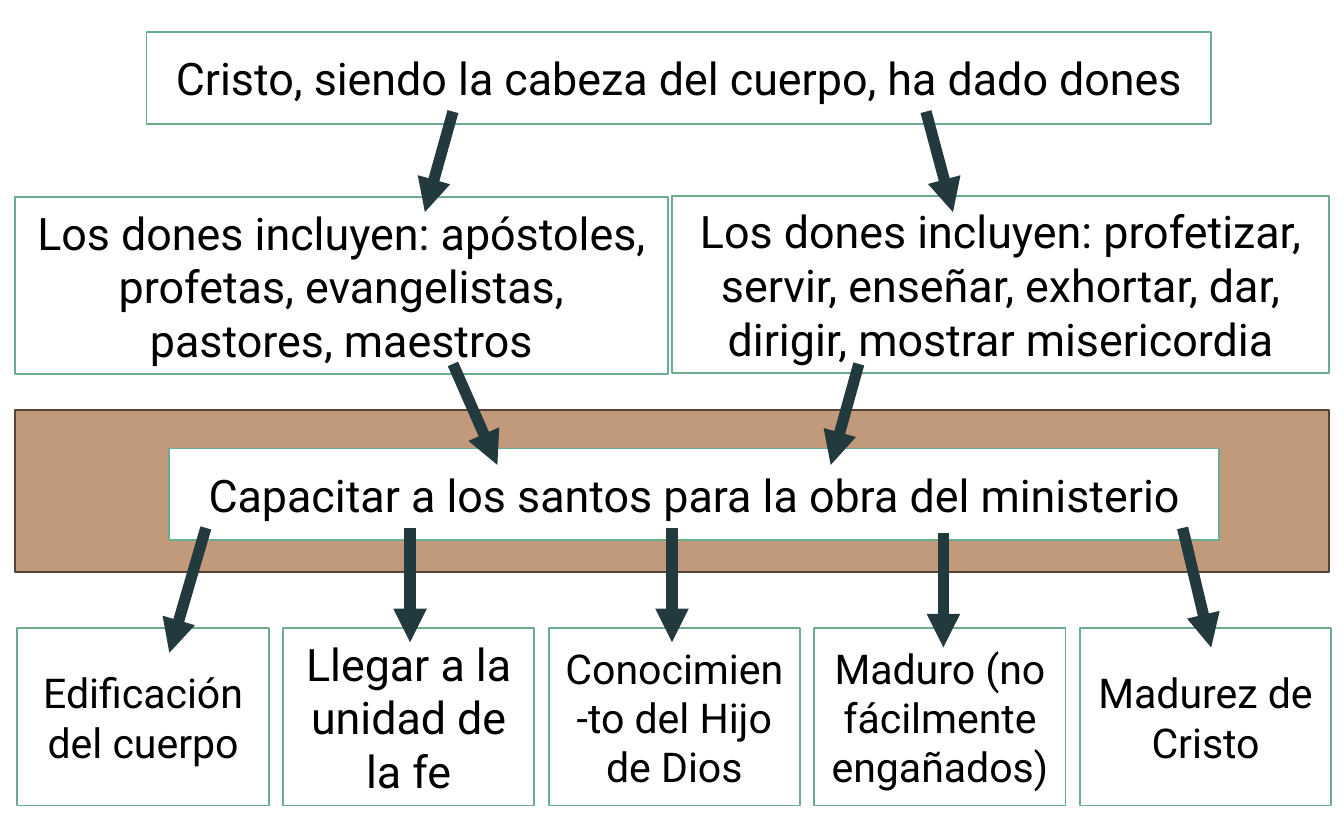
import pptx
import pptx.util
import pptx.dml.color
import pptx.enum.shapes
import pptx.enum.text
import pptx.oxml
import pptx.oxml.ns
from pptx.util import Cm

GREEN, WHITE, BLACK, DARK = "6DAD8F", "FFFFFF", "000000", "223A3D"
BAND, BAND_EDGE = "C19A7B", "554336"

GIFTS = [
    ("Los dones incluyen: apóstoles, profetas, evangelistas, pastores, maestros",
     (0.28, 3.73, 12.34, 3.35)),
    ("Los dones incluyen: profetizar, servir, enseñar, exhortar, dar, dirigir, "
     "mostrar misericordia", (12.7, 3.71, 12.42, 3.35)),
]
OUTCOMES = [
    ("Edificación del cuerpo", 22),
    ("Llegar a la unidad de la fe", 24),
    ("Conocimien-to del Hijo de Dios", 22),
    ("Maduro (no fácilmente engañados)", 22),
    ("Madurez de Cristo", 22),
]
OUTCOME_LEFT, OUTCOME_PITCH = 0.33, 5.02
ARROWS = [
    (8.56, 2.11, 8.03, 4.01), (17.5, 2.11, 18.01, 4.01),
    (8.56, 6.88, 9.4, 8.79), (16.23, 6.88, 15.7, 8.79),
    (3.89, 9.98, 3.2, 12.34), (7.75, 9.98, 7.75, 12.14),
    (12.7, 9.98, 12.7, 12.14), (17.83, 10.08, 17.83, 12.24),
    (22.35, 9.98, 22.89, 12.24),
]


def color(hex_string):
    """Turn a hex string into a colour."""
    return pptx.dml.color.RGBColor.from_string(hex_string)


def paint(box, fill, edge):
    """Give a box its fill and thin outline."""
    box.fill.solid()
    box.fill.fore_color.rgb = color(fill)
    box.line.color.rgb = color(edge)
    box.line.width = pptx.util.Pt(1)


def write(box, text, size):
    """Centre a text in a box."""
    frame = box.text_frame
    frame.text = text
    frame.word_wrap = True
    frame.auto_size = pptx.enum.text.MSO_AUTO_SIZE.NONE
    frame.vertical_anchor = pptx.enum.text.MSO_ANCHOR.MIDDLE
    para = frame.paragraphs[0]
    para.alignment = pptx.enum.text.PP_ALIGN.CENTER
    para.font.name = "Roboto"
    para.font.size = pptx.util.Pt(size)
    para.font.color.rgb = color(BLACK)


def add_box(page, place, fill=WHITE, edge=GREEN):
    """Add a flat outlined rectangle."""
    kind = pptx.enum.shapes.MSO_SHAPE.RECTANGLE
    box = page.shapes.add_shape(kind, *map(Cm, place))
    box.shadow.inherit = False
    paint(box, fill, edge)
    return box


def add_title(page, text, place):
    """Place the outlined title."""
    title = page.shapes.title
    title.left, title.top, title.width, title.height = map(Cm, place)
    paint(title, WHITE, GREEN)
    write(title, text, 24)


def add_arrow(page, ends):
    """Add a thick arrow between two points."""
    kind = pptx.enum.shapes.MSO_CONNECTOR.STRAIGHT
    arrow = page.shapes.add_connector(kind, *map(Cm, ends))
    arrow.line.color.rgb = color(DARK)
    arrow.line.width = pptx.util.Pt(6)
    space = pptx.oxml.ns.nsdecls("a")
    head = pptx.oxml.parse_xml(f'<a:tailEnd {space} type="triangle"/>')
    arrow.line._get_or_add_ln().append(head)
    arrow._element.spPr.append(pptx.oxml.parse_xml(f"<a:effectLst {space}/>"))


def main():
    """Build the slide about the gifts."""
    deck = pptx.Presentation()
    deck.slide_width, deck.slide_height = Cm(25.4), Cm(15.88)
    page = deck.slides.add_slide(deck.slide_layouts[5])
    add_title(page, "Cristo, siendo la cabeza del cuerpo, ha dado dones",
              (2.77, 0.61, 20.12, 1.73))
    add_box(page, (0.28, 7.75, 24.84, 3.07), BAND, BAND_EDGE)
    for text, place in GIFTS:
        write(add_box(page, place), text, 24)
    write(add_box(page, (3.2, 8.48, 19.84, 1.73)),
          "Capacitar a los santos para la obra del ministerio", 24)
    for index, (text, size) in enumerate(OUTCOMES):
        left = OUTCOME_LEFT + index * OUTCOME_PITCH
        write(add_box(page, (left, 11.88, 4.75, 3.35)), text, size)
    for ends in ARROWS:
        add_arrow(page, ends)
    deck.save("out.pptx")


if __name__ == "__main__":
    main()
